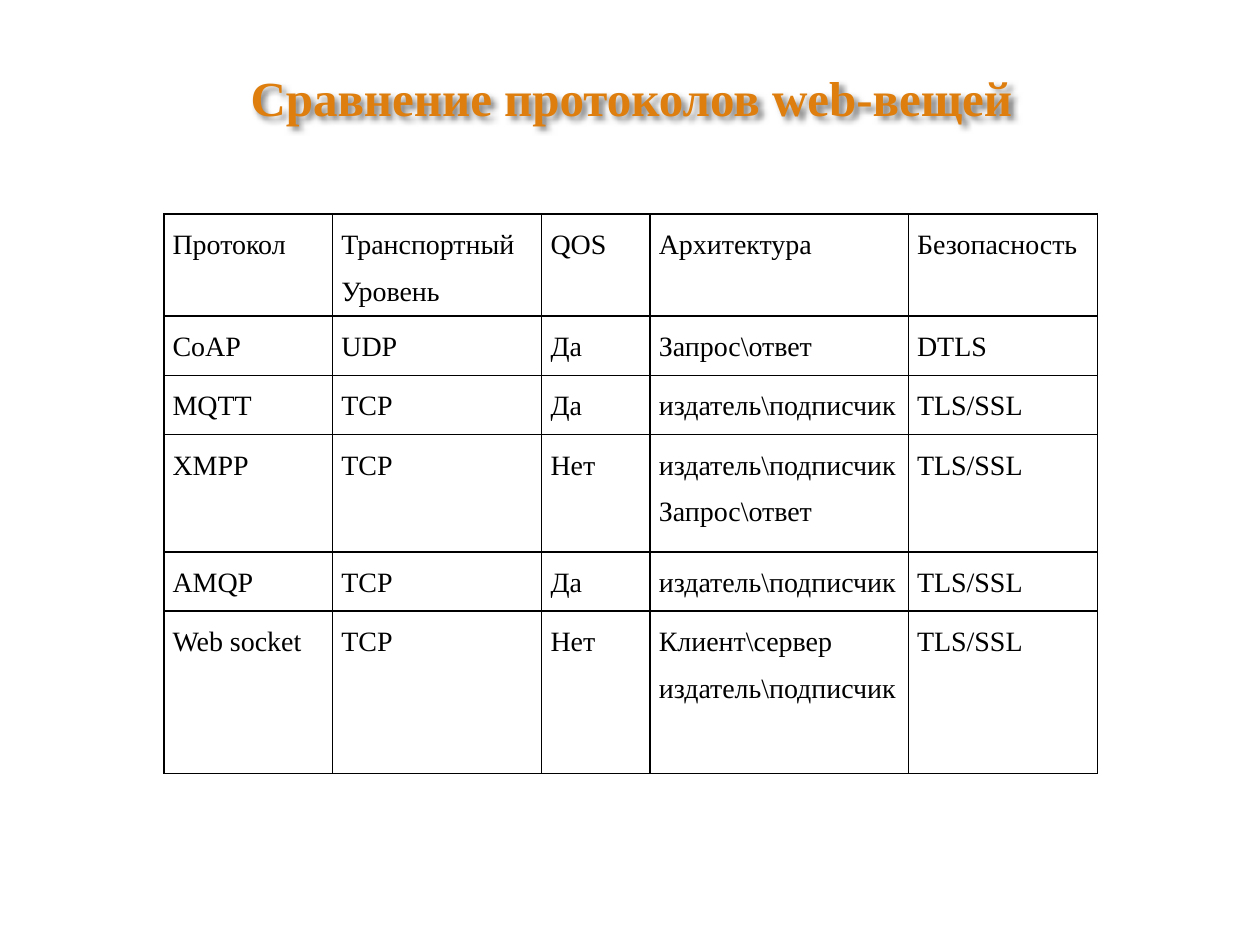
from lxml import etree
from pptx import Presentation
from pptx.dml.color import RGBColor
from pptx.enum import text
from pptx.oxml import parse_xml
from pptx.oxml.ns import nsdecls
from pptx.util import Inches, Pt

FONT = "Times New Roman"
ORANGE = RGBColor(0xDD, 0x7E, 0x0E)
BLACK = RGBColor(0, 0, 0)

COLUMN_WIDTHS = [1.34, 1.66, 0.86, 2.05, 1.5]
ROW_HEIGHTS = [0.81, 0.47, 0.47, 0.93, 0.47, 1.29]
PUB_SUB = "издатель\\подписчик"
REQUEST = "Запрос\\ответ"
ROWS = [
    ["Протокол", "Транспортный\nУровень", "QOS", "Архитектура", "Безопасность"],
    ["CoAP", "UDP", "Да", REQUEST, "DTLS"],
    ["MQTT", "TCP", "Да", PUB_SUB, "TLS/SSL"],
    ["XMPP", "TCP", "Нет", f"{PUB_SUB}\n{REQUEST}", "TLS/SSL"],
    ["AMQP", "TCP", "Да", PUB_SUB, "TLS/SSL"],
    ["Web socket", "TCP", "Нет", f"Клиент\\сервер\n{PUB_SUB}", "TLS/SSL"],
]


def style_runs(p, size, color, bold=False):
    for r in p.runs:
        r.font.name = FONT
        r.font.size = Pt(size)
        r.font.bold = bold
        r.font.color.rgb = color


def add_shadow(sp):
    """Cast a soft shadow from the text of an unfilled shape."""
    sp.fill.background()
    sp._element.spPr.append(parse_xml(
        f'<a:effectLst {nsdecls("a")}>'
        f'<a:outerShdw blurRad="{Pt(3)}" dist="{Pt(3)}" dir="2700000" algn="tl">'
        '<a:srgbClr val="000000"><a:alpha val="50000"/></a:srgbClr>'
        '</a:outerShdw></a:effectLst>'))


def set_title(s, title):
    sp = s.shapes.title
    sp.left, sp.top = Inches(0.51), Inches(0.36)
    sp.width, sp.height = Inches(9), Inches(1.18)
    tf = sp.text_frame
    tf.text = title
    tf.auto_size = text.MSO_AUTO_SIZE.NONE
    tf.vertical_anchor = text.MSO_ANCHOR.BOTTOM
    tf.margin_left = tf.margin_right = tf.margin_top = Inches(0.1)
    tf.margin_bottom = Inches(0.54)
    p = tf.paragraphs[0]
    p.alignment = text.PP_ALIGN.CENTER
    p.line_spacing = 1.0
    style_runs(p, 28, ORANGE, bold=True)
    add_shadow(sp)


def add_borders(cell):
    tc_pr = cell._tc.get_or_add_tcPr()
    for i, side in enumerate("LRTB"):
        tc_pr.insert(i, parse_xml(
            f'<a:ln{side} {nsdecls("a")} w="{Pt(1)}"><a:solidFill>'
            f'<a:srgbClr val="{BLACK}"/></a:solidFill></a:ln{side}>'))


def fill_cell(cell, content):
    cell.margin_left = cell.margin_right = Inches(0.07)
    cell.margin_top = cell.margin_bottom = 0
    cell.fill.background()
    add_borders(cell)
    cell.text_frame.text = content
    for p in cell.text_frame.paragraphs:
        p.alignment = text.PP_ALIGN.JUSTIFY
        p.line_spacing = 1.5
        style_runs(p, 16, BLACK)


def add_protocol_table(s):
    table = s.shapes.add_table(
        len(ROWS), len(COLUMN_WIDTHS), Inches(1.3), Inches(1.7),
        Inches(sum(COLUMN_WIDTHS)), Inches(sum(ROW_HEIGHTS))).table
    table.first_row = table.horz_banding = False
    for column, width in zip(table.columns, COLUMN_WIDTHS):
        column.width = Inches(width)
    for row, height, contents in zip(table.rows, ROW_HEIGHTS, ROWS):
        row.height = Inches(height)
        for cell, content in zip(row.cells, contents):
            fill_cell(cell, content)


def main():
    prs = Presentation()
    prs.slide_width, prs.slide_height = Inches(10), Inches(7.5)
    s = prs.slides.add_slide(prs.slide_layouts[5])
    set_title(s, "Сравнение протоколов web-вещей")
    add_protocol_table(s)
    prs.save("out.pptx")


if __name__ == "__main__":
    main()
